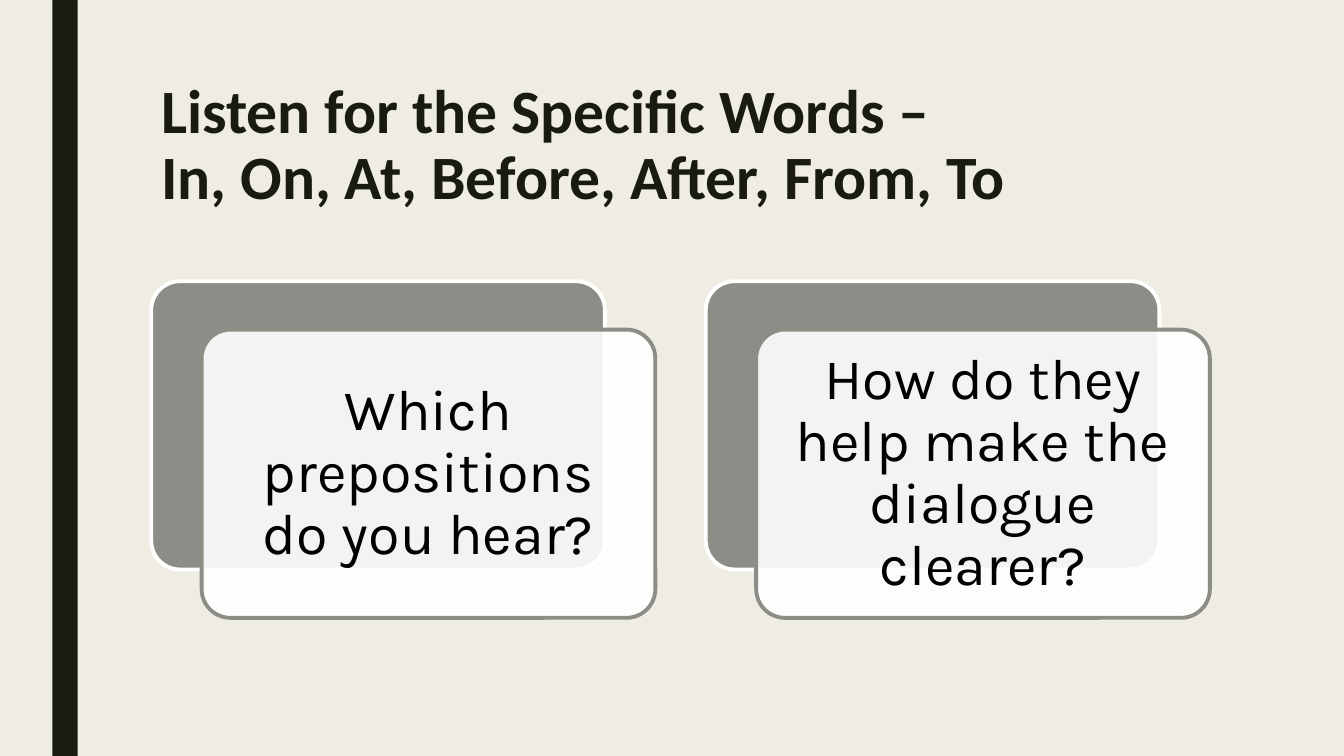
from dataclasses import dataclass

from lxml.etree import SubElement
from pptx import Presentation
from pptx.dml.color import RGBColor
from pptx.enum.shapes import MSO_SHAPE as Preset
from pptx.enum.text import MSO_ANCHOR as Anchor, PP_ALIGN as Align
from pptx.oxml.ns import qn
from pptx.shapes.autoshape import Shape
from pptx.slide import Slide
from pptx.util import Inches, Pt

INK = RGBColor(0x19, 0x1B, 0x0E)
PAPER = RGBColor(0xEF, 0xED, 0xE3)
GRAY = RGBColor(0x8C, 0x8D, 0x86)
WHITE = RGBColor(0xFF, 0xFF, 0xFF)
BLACK = RGBColor(0x00, 0x00, 0x00)

COLUMN = Inches(0.5)
ROW = Inches(0.075)
CARD_PITCH = 11


@dataclass(frozen=True)
class Area:
    column: float
    row: float
    columns: float
    rows: float

    def shifted(self, columns: float, rows: float = 0) -> "Area":
        return Area(self.column + columns, self.row + rows, self.columns, self.rows)

    def lengths(self) -> tuple[int, int, int, int]:
        return (
            round(self.column * COLUMN),
            round(self.row * ROW),
            round(self.columns * COLUMN),
            round(self.rows * ROW),
        )


STRIPE = Area(1.04, 0, 0.5, 100)
TITLE = Area(3, 10, 21, 21.6)
FIRST_CARD = Area(3, 37.2, 9, 38.13)
QUESTIONS = (
    "Which prepositions do you hear?",
    "How do they help make the dialogue clearer?",
)


def add_box(page: Slide, preset: Preset, area: Area, fill: RGBColor) -> Shape:
    box = page.shapes.add_shape(preset, *area.lengths())
    box.shadow.inherit = False
    box.fill.solid()
    box.fill.fore_color.rgb = fill
    box.line.fill.background()
    return box


def add_card(page: Slide, area: Area, fill: RGBColor, line: RGBColor) -> Shape:
    card = add_box(page, Preset.ROUNDED_RECTANGLE, area, fill)
    card.adjustments[0] = 0.1
    card.line.color.rgb = line
    card.line.width = Pt(2.75)
    return card


def set_opacity(box: Shape, percent: int) -> None:
    color = box.fill._xPr.find(qn("a:solidFill"))[0]
    SubElement(color, qn("a:alpha")).set("val", str(percent * 1000))


def write_question(card: Shape, question: str) -> None:
    frame = card.text_frame
    frame.word_wrap = True
    frame.vertical_anchor = Anchor.MIDDLE
    frame.margin_left = frame.margin_right = Inches(0.17)
    frame.margin_top = frame.margin_bottom = Inches(0.17)
    frame.text = question
    para = frame.paragraphs[0]
    para.alignment = Align.CENTER
    para.line_spacing = 0.9
    para.font.name = "Karla"
    para.font.size = Pt(41)
    para.font.color.rgb = BLACK


def write_title(page: Slide) -> None:
    title = page.shapes.title
    title.left, title.top, title.width, title.height = TITLE.lengths()
    frame = title.text_frame
    frame.word_wrap = True
    frame.vertical_anchor = Anchor.TOP
    frame.text = "Listen for the Specific Words – \vIn, On, At, Before, After, From, To"
    para = frame.paragraphs[0]
    para.alignment = Align.LEFT
    para.line_spacing = 0.89
    para.font.name = "Calibri"
    para.font.size = Pt(44)
    para.font.bold = True
    para.font.color.rgb = INK


def main() -> None:
    deck = Presentation()
    deck.slide_width, deck.slide_height = Inches(13.33), Inches(7.5)
    page = deck.slides.add_slide(deck.slide_layouts.get_by_name("Title Only"))
    page.background.fill.solid()
    page.background.fill.fore_color.rgb = PAPER

    add_box(page, Preset.RECTANGLE, STRIPE, INK)
    write_title(page)
    for index, question in enumerate(QUESTIONS):
        back = FIRST_CARD.shifted(index * CARD_PITCH)
        add_card(page, back, GRAY, WHITE)
        front = add_card(page, back.shifted(1, 6.4), WHITE, GRAY)
        set_opacity(front, 90)
        write_question(front, question)

    deck.save("out.pptx")


if __name__ == "__main__":
    main()
